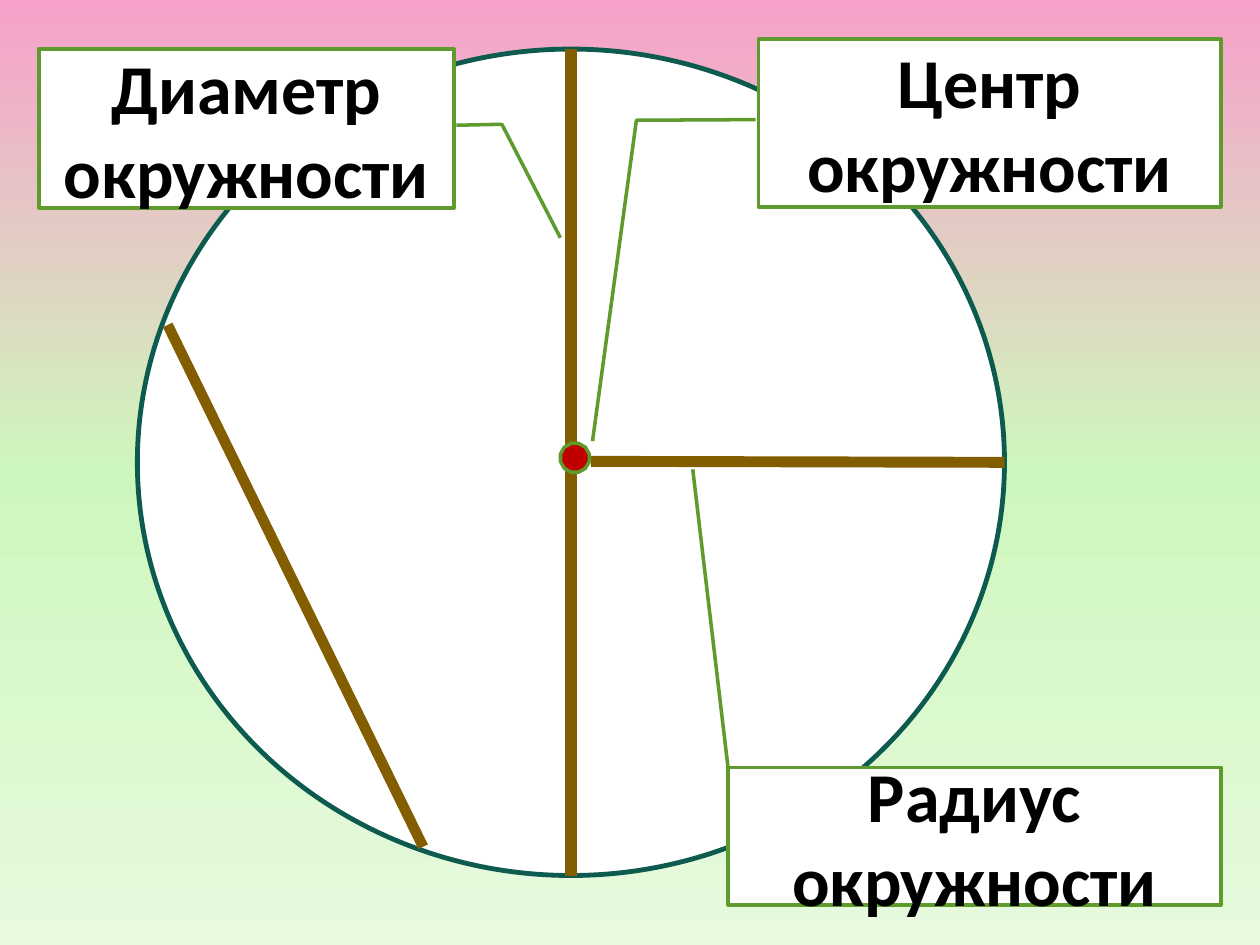
import copy

import pptx
import pptx.dml.color
import pptx.enum.shapes
import pptx.enum.text
import pptx.oxml
import pptx.oxml.ns
import pptx.util

Cm = pptx.util.Cm
Pt = pptx.util.Pt
SHAPE = pptx.enum.shapes.MSO_SHAPE


def color(hex_string):
    return pptx.dml.color.RGBColor.from_string(hex_string)


def add_outlined(kind, place, fill, line, width):
    shape = slide.shapes.add_shape(kind, *[Cm(length) for length in place])
    shape.shadow.inherit = False
    shape.fill.solid()
    shape.fill.fore_color.rgb = color(fill)
    shape.line.color.rgb = color(line)
    shape.line.width = Pt(width)
    return shape


deck = pptx.Presentation()
deck.slide_width = Cm(25.4)
deck.slide_height = Cm(19.05)
slide = deck.slides.add_slide(deck.slide_layouts[6])

background = slide.background.fill
background.gradient()
background.gradient_angle = 270
stop_list = slide.element.find(".//" + pptx.oxml.ns.qn("a:gsLst"))
stop_list.insert(1, copy.deepcopy(stop_list[0]))
stops = [(0, "F7A1CA"), (0.5, "CEF7BD"), (1, "E7FADF")]
for stop, (position, hex_string) in zip(background.gradient_stops, stops):
    stop.position = position
    stop.color.rgb = color(hex_string)

circle = add_outlined(SHAPE.FLOWCHART_CONNECTOR, (2.77, 0.99, 17.48, 16.66), "FFFFFF", "0D5A4F", 2.75)

segments = [
    ("radius", (11.91, 9.3, 20.25, 9.32), 6.25),
    ("diameter", (11.51, 0.99, 11.51, 17.65), 6.5),
    ("chord", (3.38, 6.55, 8.53, 17.07), 6),
]
lines = {}
for name, ends, width in segments:
    line = slide.shapes.add_connector(
        pptx.enum.shapes.MSO_CONNECTOR.STRAIGHT, *[Cm(length) for length in ends])
    line.line.color.rgb = color("835E01")
    line.line.width = Pt(width)
    line.element.spPr.append(pptx.oxml.parse_xml(
        '<a:effectLst xmlns:a="http://schemas.openxmlformats.org/drawingml/2006/main"/>'))
    lines[name] = line

callouts = [
    ("Центр окружности", SHAPE.LINE_CALLOUT_2, (15.29, 0.79, 9.32, 3.38),
     (0.48, -0.006, 0.484, -0.264, 2.398, -0.359), False),
    ("Радиус окружности", SHAPE.LINE_CALLOUT_1, (14.68, 15.47, 9.93, 2.77),
     (0.01, 0, -2.169, -0.072), False),
    ("Диаметр окружности", SHAPE.LINE_CALLOUT_2, (0.79, 0.99, 8.36, 3.2),
     (0.48, -0.006, 0.474, -0.116, 1.189, -0.257), True),
]
for text, kind, place, pointer, flipped in callouts:
    callout = add_outlined(kind, place, "FFFFFF", "5E9B2C", 2)
    for index, value in enumerate(pointer):
        callout.adjustments[index] = value
    if flipped:
        callout.element.spPr.xfrm.set("flipH", "1")
    frame = callout.text_frame
    frame.text = text
    frame.word_wrap = True
    frame.vertical_anchor = pptx.enum.text.MSO_ANCHOR.MIDDLE
    para = frame.paragraphs[0]
    para.alignment = pptx.enum.text.PP_ALIGN.CENTER
    font = para.runs[0].font
    font.name = "Calibri"
    font.size = Pt(40)
    font.bold = True
    font.color.rgb = color("000000")

center = add_outlined(SHAPE.DODECAGON, (11.3, 8.94, 0.58, 0.58), "C00000", "5E9B2C", 2)

deck.save("out.pptx")
